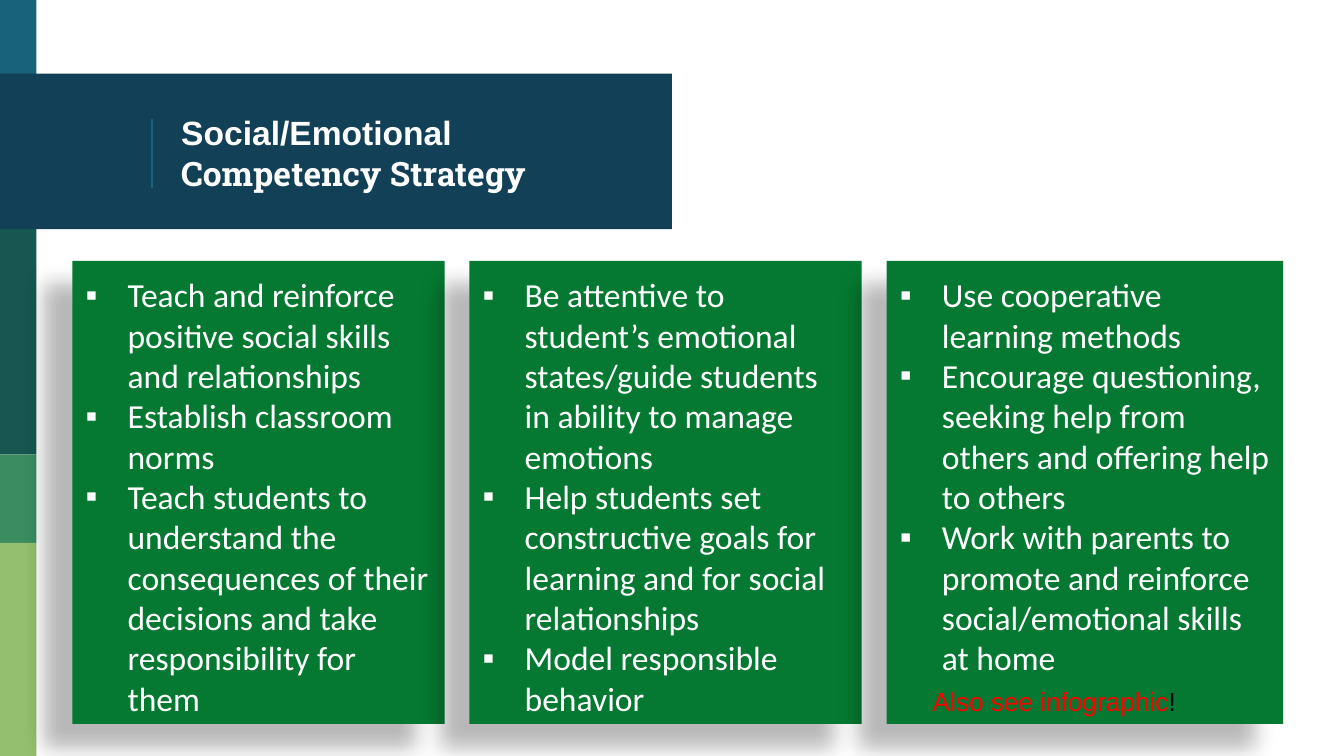
from lxml import etree
from pptx import Presentation
from pptx.dml.color import RGBColor
from pptx.enum.shapes import MSO_CONNECTOR, MSO_SHAPE
from pptx.enum.text import MSO_ANCHOR, PP_ALIGN
from pptx.oxml import parse_xml
from pptx.oxml.ns import nsdecls, qn
from pptx.util import Pt

COLORS = {
    "teal": "18637B", "navy": "124057", "pine": "165751", "green": "3B8D61",
    "lime": "94BF6E", "card": "057931", "white": "FFFFFF", "red": "FF0000",
    "black": "000000",
}
STRIPS = [("teal", 0, 41.8), ("pine", 122.4, 121), ("green", 243.4, 47.5),
          ("lime", 290.9, 114.1)]
CARDS = [
    (199.4, ["Teach and reinforce positive social skills and relationships",
             "Establish classroom norms",
             "Teach students to understand the consequences of their decisions "
             "and take responsibility for them"]),
    (210.2, ["Be attentive to student’s emotional states/guide students in "
             "ability to manage emotions",
             "Help students set constructive goals for learning and for social "
             "relationships",
             "Model responsible behavior"]),
    (212.4, ["Use cooperative learning methods",
             "Encourage questioning, seeking help from others and offering help "
             "to others",
             "Work with parents to promote and reinforce social/emotional "
             "skills at home"]),
]
CARD_GAP = 13.3
INDENT = 22.5


def rgb(name):
    return RGBColor.from_string(COLORS[name])


def add_rect(slide, box, color):
    sp = slide.shapes.add_shape(MSO_SHAPE.RECTANGLE, *map(Pt, box))
    sp.shadow.inherit = False
    sp.fill.solid()
    sp.fill.fore_color.rgb = rgb(color)
    sp.line.fill.background()
    return sp


def set_frame(tf, inset, anchor=MSO_ANCHOR.TOP):
    x, y = map(Pt, inset)
    values = {"word_wrap": True, "vertical_anchor": anchor, "margin_left": x,
              "margin_right": x, "margin_top": y, "margin_bottom": y}
    for name, value in values.items():
        setattr(tf, name, value)


def add_run(p, text, color, font, size, bold=False):
    r = p.add_run()
    r.text = text
    for name, value in {"name": font, "size": Pt(size), "bold": bold}.items():
        setattr(r.font, name, value)
    r.font.color.rgb = rgb(color)


def add_bullet(p):
    pPr = p._p.get_or_add_pPr()
    pPr.set("marL", str(Pt(INDENT)))
    pPr.set("indent", str(-Pt(INDENT)))
    bu_clr = etree.SubElement(pPr, qn("a:buClr"))
    etree.SubElement(bu_clr, qn("a:srgbClr"), val=COLORS["white"])
    etree.SubElement(pPr, qn("a:buFont"), typeface="Arial")
    etree.SubElement(pPr, qn("a:buChar"), char="▪")


def add_shadow(sp):
    sp._element.spPr.find(qn("a:effectLst")).append(parse_xml(
        f'<a:outerShdw {nsdecls("a")} blurRad="{Pt(11.8)}" dist="{Pt(19.7)}" '
        f'dir="{141 * 60000}" algn="tr" rotWithShape="0">'
        f'<a:srgbClr val="{COLORS["black"]}"><a:alpha val="28000"/></a:srgbClr>'
        '</a:outerShdw>'))


def add_side_strip(slide, left, top, width):
    for color, offset, height in STRIPS:
        add_rect(slide, (left, top + offset, width, height), color)


def add_title_band(slide, left, top, width, height):
    add_rect(slide, (left, top, width, height), "navy")
    x = left + 81.4
    rule = slide.shapes.add_connector(
        MSO_CONNECTOR.STRAIGHT, Pt(x), Pt(top + 24.5), Pt(x), Pt(top + 61.2))
    rule.line.color.rgb = rgb("teal")
    rule.line.width = Pt(0.75)
    etree.SubElement(rule._element.spPr, qn("a:effectLst"))

    title = slide.shapes.add_textbox(Pt(left + 90), Pt(top + 2), Pt(252.7), Pt(80.6))
    set_frame(title.text_frame, (7.2, 7.2), MSO_ANCHOR.MIDDLE)
    p = title.text_frame.paragraphs[0]
    add_run(p, "Social/Emotional", "white", "Arial", 18, True)
    add_run(p, " Competency Strategy", "white", "Roboto Slab", 18, True)


def add_card(slide, left, top, width, height, items):
    card = add_rect(slide, (left, top, width, height), "card")
    add_shadow(card)
    tf = card.text_frame
    set_frame(tf, (7.2, 7.2))
    for i, item in enumerate(items):
        p = tf.add_paragraph() if i else tf.paragraphs[0]
        p.alignment = PP_ALIGN.LEFT
        add_bullet(p)
        add_run(p, item, "white", "Calibri", 18)


def add_cards(slide, left, top, height):
    for width, items in CARDS:
        add_card(slide, left, top, width, height, items)
        left += width + CARD_GAP


def add_note(slide, left, top, width, height):
    note = slide.shapes.add_textbox(*map(Pt, (left, top, width, height)))
    set_frame(note.text_frame, (7.2, 3.6))
    p = note.text_frame.paragraphs[0]
    add_run(p, "Also see infographic", "red", "Arial", 14)
    add_run(p, "!", "black", "Arial", 14)


def main():
    prs = Presentation()
    prs.slide_width, prs.slide_height = Pt(720), Pt(405)
    slide = prs.slides.add_slide(prs.slide_layouts[6])
    add_side_strip(slide, 0, 0, 19.5)
    add_title_band(slide, 0, 39.5, 360, 83.3)
    add_cards(slide, 38.8, 139.8, 248.1)
    add_note(slide, 492.6, 363.8, 194.4, 24.3)
    prs.save("out.pptx")


if __name__ == "__main__":
    main()
